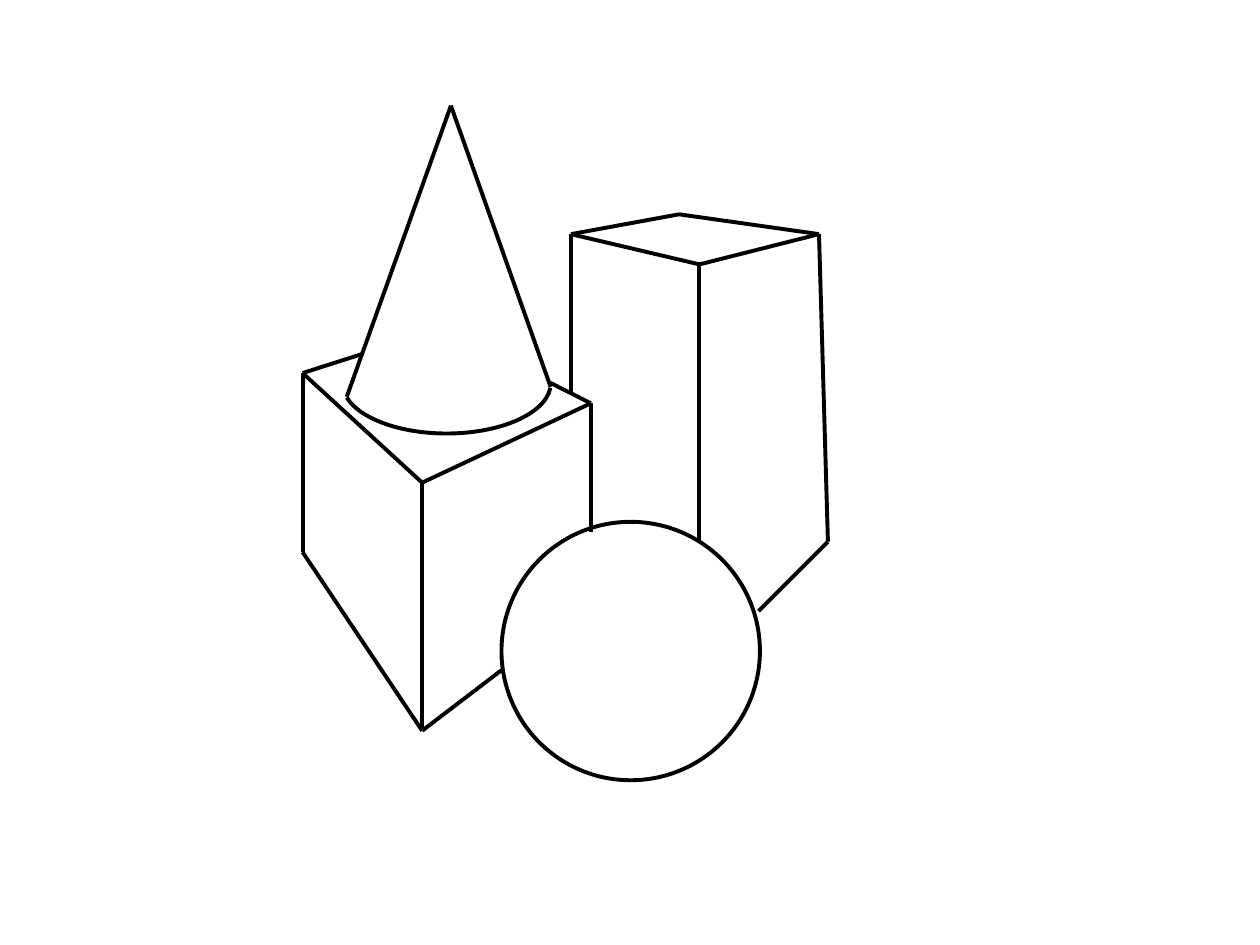
from lxml.etree import SubElement
from pptx import Presentation
from pptx.dml.color import RGBColor
from pptx.enum.shapes import MSO_CONNECTOR as Connector, MSO_SHAPE as Shape
from pptx.oxml.ns import qn
from pptx.util import Cm, Pt

THEME = {"ink": RGBColor(0, 0, 0), "stroke": Pt(2.25)}

# Each solid: its named corners in cm, then the visible edges between them
PRISM = (
    {
        "top left": (11.51, 4.72), "top back": (13.69, 4.32),
        "top right": (16.51, 4.72), "top front": (14.1, 5.33),
        "left end": (11.51, 7.92), "front end": (14.1, 10.92),
        "base right": (16.69, 10.92), "base end": (15.29, 12.32),
    },
    [
        ("top left", "top back"), ("top back", "top right"),
        ("top right", "top front"), ("top front", "top left"),
        ("top left", "left end"), ("top front", "front end"),
        ("top right", "base right"), ("base right", "base end"),
    ],
)
CUBE = (
    {
        "top left": (6.1, 7.52), "top front": (8.51, 9.73),
        "top right": (11.91, 8.13), "back left end": (7.29, 7.14),
        "back right end": (11.1, 7.72), "base left": (6.1, 11.13),
        "base front": (8.51, 14.73), "base end": (10.11, 13.51),
        "right end": (11.91, 10.72),
    },
    [
        ("top left", "top front"), ("top front", "top right"),
        ("top left", "back left end"), ("top right", "back right end"),
        ("top left", "base left"), ("top front", "base front"),
        ("top right", "right end"), ("base left", "base front"),
        ("base front", "base end"),
    ],
)
CONE = (
    {"apex": (9.09, 2.13), "left": (6.99, 8), "right": (11.1, 7.8)},
    [("apex", "left"), ("apex", "right")],
)

# Curved outlines: left, top, width, height in cm
CONE_BASE = (6.91, 6.73, 4.19, 2.01)
CONE_BASE_SWEEP = (1.4, 103.25)  # start and end angle, in units of 5/3 degree
SPHERE = (10.11, 10.52, 5.21, 5.21)


def ink(line):
    line.color.rgb = THEME["ink"]
    line.width = THEME["stroke"]


def draw_edges(slide, corners, edges):
    for start, end in edges:
        points = [Cm(value) for value in corners[start] + corners[end]]
        edge = slide.shapes.add_connector(Connector.STRAIGHT, *points)
        ink(edge.line)
        SubElement(edge._element.spPr, qn("a:effectLst"))


def draw_curve(slide, preset, box):
    curve = slide.shapes.add_shape(preset, *map(Cm, box))
    curve.shadow.inherit = False
    curve.fill.background()
    ink(curve.line)
    return curve


def main():
    deck = Presentation()
    deck.slide_width, deck.slide_height = Cm(25.4), Cm(19.05)
    slide = deck.slides.add_slide(deck.slide_layouts[6])

    # Straight edges, from back to front
    for corners, edges in (PRISM, CUBE, CONE):
        draw_edges(slide, corners, edges)

    # Front rim of the cone, then the sphere
    rim = draw_curve(slide, Shape.ARC, CONE_BASE)
    rim.adjustments[0], rim.adjustments[1] = CONE_BASE_SWEEP
    draw_curve(slide, Shape.OVAL, SPHERE)

    deck.save("out.pptx")


if __name__ == "__main__":
    main()
